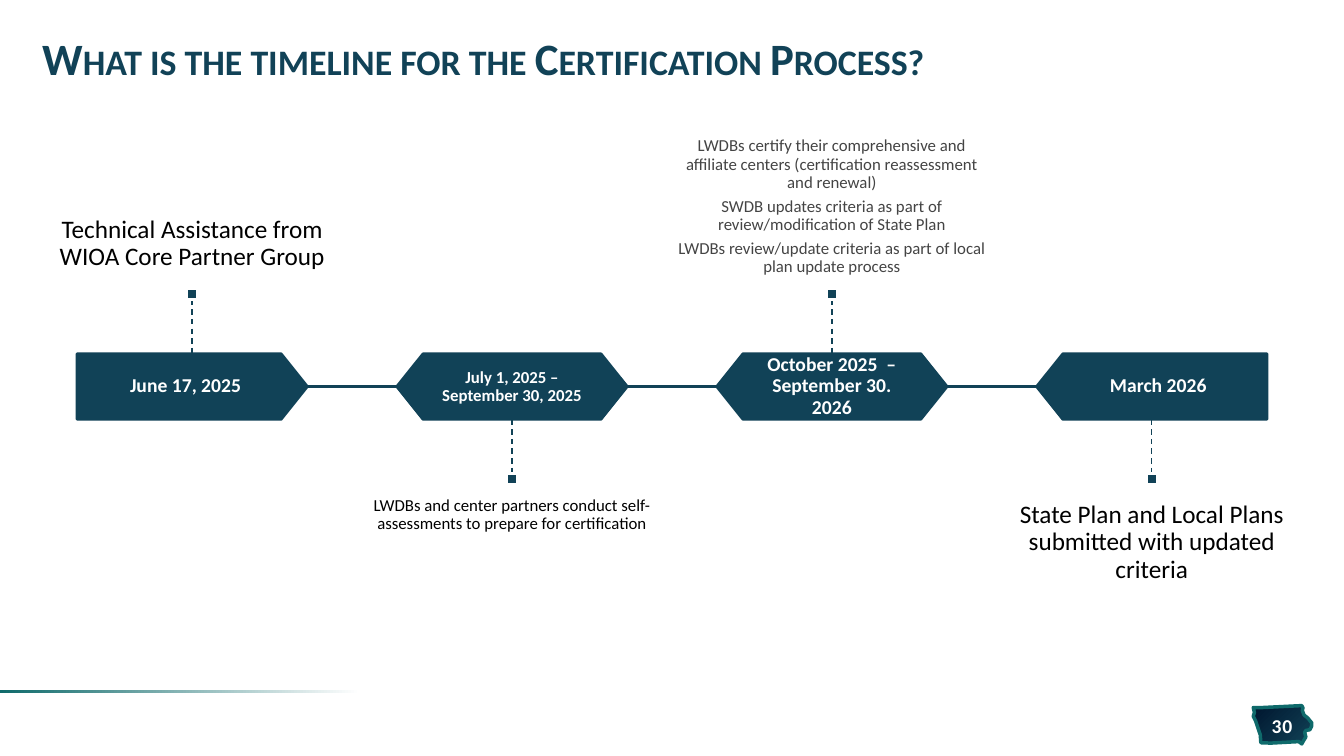
from dataclasses import dataclass
from itertools import accumulate

from lxml import etree
from pptx import Presentation
from pptx.dml.color import RGBColor
from pptx.enum.dml import MSO_LINE
from pptx.enum.shapes import MSO_CONNECTOR, MSO_SHAPE
from pptx.enum.text import MSO_ANCHOR, PP_ALIGN
from pptx.oxml.ns import qn
from pptx.util import Inches, Pt

RECT, PLATE, HEXAGON = MSO_SHAPE.RECTANGLE, MSO_SHAPE.PENTAGON, MSO_SHAPE.HEXAGON
STRAIGHT, DASH = MSO_CONNECTOR.STRAIGHT, MSO_LINE.DASH
TOP, MIDDLE, BOTTOM = MSO_ANCHOR.TOP, MSO_ANCHOR.MIDDLE, MSO_ANCHOR.BOTTOM
LEFT, CENTER = PP_ALIGN.LEFT, PP_ALIGN.CENTER


@dataclass(frozen=True)
class Theme:
    font: str = "Calibri"
    navy: str = "114257"
    night: str = "00162E"
    teal: str = "0F6A6B"
    white: str = "FFFFFF"
    black: str = "000000"
    grey: str = "444444"
    title: int = 32
    large: int = 18
    medium: int = 14
    small: int = 12


T = Theme()
WIDTH, HEIGHT = 13.33, 7.5
MARGIN = 0.32
CONTENT = WIDTH - 2 * MARGIN
ROWS = dict(above=1.73, top_dot=0.11, top_stem=0.54, band=0.65,
            low_stem=0.54, low_dot=0.11, below=1.73)

STEPS = [
    dict(date="June 17, 2025", date_size=T.medium, size=T.large, color=T.black,
         notes=["Technical Assistance from WIOA Core Partner Group"]),
    dict(date="July 1, 2025 – September 30, 2025", date_size=T.small, size=T.small,
         color=T.black,
         notes=["LWDBs and center partners conduct self-assessments to prepare for certification"]),
    dict(date="October 2025  – September 30. 2026", date_size=T.medium, size=T.small,
         color=T.grey,
         notes=["LWDBs certify their comprehensive and affiliate centers "
                "(certification reassessment and renewal)",
                "SWDB updates criteria as part of review/modification of State Plan",
                "LWDBs review/update criteria as part of local plan update process"]),
    dict(date="March 2026", date_size=T.medium, size=T.large, color=T.black,
         notes=["State Plan and Local Plans submitted with updated criteria"]),
]

STATE_OUTLINE = [
    (0.83, 0), (0.17, 0.05), (0, 0.05), (0.02, 0.18), (0, 0.28), (0.04, 0.4),
    (0.09, 0.63), (0.12, 0.76), (0.13, 0.97), (0.3, 0.98), (0.78, 0.94),
    (0.83, 1), (0.86, 0.92), (0.9, 0.82), (0.88, 0.7), (0.9, 0.65),
    (0.97, 0.63), (1, 0.53), (1, 0.45), (0.93, 0.32), (0.87, 0.25),
    (0.84, 0.13), (0.85, 0.06),
]


def rgb(value):
    return RGBColor.from_string(value)


def inches(box):
    return [Inches(v) for v in box]


def set_attrs(obj, values):
    for name, value in values.items():
        setattr(obj, name, value)


def paint(sp, fill, line=None, weight=0):
    sp.shadow.inherit = False
    if isinstance(fill, str):
        sp.fill.solid()
        sp.fill.fore_color.rgb = rgb(fill)
    else:
        stops, angle = fill
        sp.fill.gradient()
        sp.fill.gradient_angle = angle
        for stop, (position, color) in zip(sp.fill.gradient_stops, stops):
            stop.position = position
            stop.color.rgb = rgb(color)
    if line:
        sp.line.color.rgb = rgb(line)
        sp.line.width = Pt(weight)
    else:
        sp.line.fill.background()


def add_block(s, kind, box, fill, line=None, weight=0):
    sp = s.shapes.add_shape(kind, *inches(box))
    paint(sp, fill, line, weight)
    return sp


def add_line(s, start, end, weight, dash=None):
    line = s.shapes.add_connector(STRAIGHT, *inches(start + end))
    line.line.color.rgb = rgb(T.navy)
    line.line.width = Pt(weight)
    if dash:
        line.line.dash_style = dash
    etree.SubElement(line._element.spPr, qn("a:effectLst"))


def add_text(s, box, texts, size, color, anchor, inset, bold=False,
             align=CENTER, spacing=0.9, after=0.35, extra=None):
    tf = s.shapes.add_textbox(*inches(box)).text_frame
    side, edge = inches(inset)
    set_attrs(tf, dict(word_wrap=True, vertical_anchor=anchor, margin_left=side,
                       margin_right=side, margin_top=edge, margin_bottom=edge))
    for i, text in enumerate(texts):
        p = tf.add_paragraph() if i else tf.paragraphs[0]
        set_attrs(p, dict(alignment=align, line_spacing=spacing,
                          space_after=Pt(after * size)))
        r = p.add_run()
        r.text = text
        set_attrs(r.font, dict(name=T.font, size=Pt(size), bold=bold))
        r.font.color.rgb = rgb(color)
        for name, value in (extra or {}).items():
            r.font._element.set(name, value)


def add_title(s, box):
    add_text(s, box, ["What is the timeline for the Certification Process?"],
             T.title, T.navy, MIDDLE, (0.1, 0.05), bold=True, align=LEFT,
             spacing=0.85, after=0, extra={"cap": "small"})


def add_footer(s, box):
    x, y, w, h = box
    add_block(s, RECT, (x, y, 0.285 * w, 0.03),
              ([(0.06, T.white), (1, T.teal)], 180))
    left, top, wide, high = x + w - 0.9, y + h - 0.5, 0.58, 0.38
    points = [(Inches(left + u * wide), Inches(top + v * high))
              for u, v in STATE_OUTLINE]
    outline = s.shapes.build_freeform(*points[0])
    outline.add_line_segments(points[1:], close=True)
    paint(outline.convert_to_shape(), ([(0, T.night), (1, T.navy)], 315), T.teal, 2.5)
    add_text(s, (left + 0.03, top + 0.08, 0.51, 0.23), ["30"], T.medium, T.white,
             MIDDLE, (0, 0.05), bold=True, spacing=1, after=0, extra={"spc": "50"})


def add_step(s, box, step, index, count):
    x, y, w, h = box
    unit = h / sum(ROWS.values())
    heights = {name: v * unit for name, v in ROWS.items()}
    tops = dict(zip(ROWS, accumulate(heights.values(), initial=y)))
    center = x + w / 2
    first, last, upper = index == 0, index == count - 1, index % 2 == 0

    plate_w, plate_h = 0.72 * w, heights["band"]
    plate_x, plate_y = center - plate_w / 2, tops["band"]
    plate = add_block(s, PLATE if first or last else HEXAGON,
                      (plate_x, plate_y, plate_w, plate_h), T.navy, T.navy, 2)
    plate.adjustments[0] = 0.4
    plate.rotation = 180 if last else 0

    tip = 0.13 if first or last else 0.27
    pad_y = 0 if first or last else 0.08
    label = (plate_x + (0 if first else tip), plate_y + pad_y,
             plate_w - (tip if first or last else 2 * tip), plate_h - 2 * pad_y)
    inset = 0.12 if step["date_size"] == T.medium else 0.1
    add_text(s, label, [step["date"]], step["date_size"], T.white, MIDDLE,
             (inset, inset), bold=True)

    note, dot, stem = (("above", "top_dot", "top_stem") if upper
                       else ("below", "low_dot", "low_stem"))
    add_text(s, (x, tops[note], w, heights[note]), step["notes"], step["size"],
             step["color"], BOTTOM if upper else TOP,
             (0, 0.17 if step["size"] == T.large else 0.12))
    if not last:
        middle = plate_y + plate_h / 2
        add_line(s, (plate_x + plate_w, middle), (plate_x + w, middle), 2)
    add_line(s, (center, tops[stem]), (center, tops[stem] + heights[stem]), 1, DASH)
    side = heights[dot]
    add_block(s, RECT, (center - side / 2, tops[dot], side, side), T.navy, T.white, 2)


def add_timeline(s, box):
    x, y, w, h = box
    column = w / len(STEPS)
    for i, step in enumerate(STEPS):
        add_step(s, (x + i * column, y, column, h), step, i, len(STEPS))


def main():
    prs = Presentation()
    prs.slide_width, prs.slide_height = inches((WIDTH, HEIGHT))
    s = prs.slides.add_slide(prs.slide_layouts[6])
    add_footer(s, (0, 6.85, WIDTH, 0.65))
    add_title(s, (MARGIN, 0.24, CONTENT, 0.75))
    add_timeline(s, (MARGIN, 1.13, CONTENT, 5.41))
    prs.save("out.pptx")


if __name__ == "__main__":
    main()
